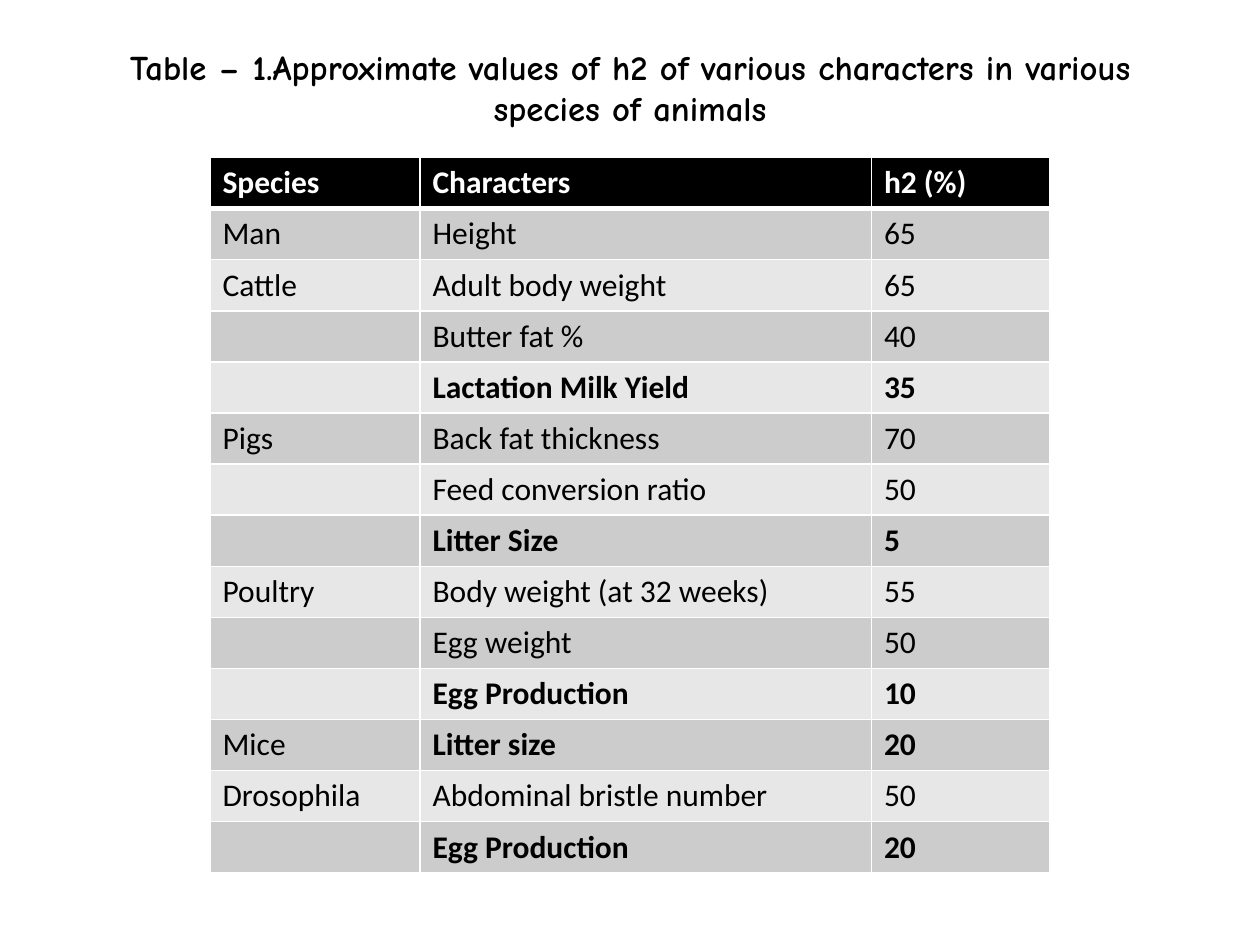
from lxml import etree
from pptx import Presentation
from pptx import util as u
from pptx.dml.color import RGBColor
from pptx.enum import text
from pptx.oxml.ns import qn

BLACK, WHITE = "000000", "FFFFFF"
BANDS = ("CCCCCC", "E7E7E7")
TITLE = ("Table – 1.Approximate values of h2 of various characters "
         "in various species of animals")
HEADINGS = ("Species", "Characters", "h2 (%)")
COLUMN_WIDTHS = (120, 258, 102)
ROW_HEIGHT = 29.2

# Species, character, heritability, emphasised
TRAITS = [
    ("Man", "Height", 65, False),
    ("Cattle", "Adult body weight", 65, False),
    ("", "Butter fat %", 40, False),
    ("", "Lactation Milk Yield", 35, True),
    ("Pigs", "Back fat thickness", 70, False),
    ("", "Feed conversion ratio", 50, False),
    ("", "Litter Size", 5, True),
    ("Poultry", "Body weight (at 32 weeks)", 55, False),
    ("", "Egg weight", 50, False),
    ("", "Egg Production", 10, True),
    ("Mice", "Litter size", 20, True),
    ("Drosophila", "Abdominal bristle number", 50, False),
    ("", "Egg Production", 20, True),
]


def color(value):
    return RGBColor.from_string(value)


def style(paragraph, font_name, size, ink, bold):
    font = paragraph.font
    font.name, font.size, font.bold = font_name, u.Pt(size), bold
    font.color.rgb = color(ink)


def add_title(slide, words):
    title = slide.shapes.add_textbox(u.Pt(36), u.Pt(21.6), u.Pt(648), u.Pt(56.2))
    frame = title.text_frame
    frame.word_wrap = True
    frame.vertical_anchor = text.MSO_ANCHOR.MIDDLE
    heading = frame.paragraphs[0]
    heading.text = words
    heading.alignment = text.PP_ALIGN.CENTER
    style(heading, "Comic Neue", 19.8, BLACK, True)


def set_borders(cell, top=1, bottom=1):
    properties = cell._tc.get_or_add_tcPr()
    for side, width in (("L", 1), ("R", 1), ("T", top), ("B", bottom)):
        line = etree.SubElement(properties, qn(f"a:ln{side}"), w=str(u.Pt(width)))
        fill = etree.SubElement(line, qn("a:solidFill"))
        etree.SubElement(fill, qn("a:srgbClr"), val=WHITE)


def fill_cell(cell, words, fill, ink, bold, top=1, bottom=1):
    set_borders(cell, top, bottom)
    cell.fill.solid()
    cell.fill.fore_color.rgb = color(fill)
    cell.text = words
    style(cell.text_frame.paragraphs[0], "Calibri", 18, ink, bold)


def add_trait_table(slide):
    row_count = len(TRAITS) + 1
    table = slide.shapes.add_table(
        row_count, len(HEADINGS), u.Pt(120), u.Pt(90),
        u.Pt(sum(COLUMN_WIDTHS)), u.Pt(ROW_HEIGHT * row_count)).table
    for column, width in zip(table.columns, COLUMN_WIDTHS):
        column.width = u.Pt(width)
    for row in table.rows:
        row.height = u.Pt(ROW_HEIGHT)

    # Header row, with a heavier rule below
    for column, heading in enumerate(HEADINGS):
        fill_cell(table.cell(0, column), heading, BLACK, WHITE, True, bottom=3)

    # Banded rows; emphasis leaves the species name regular
    for row, (species, character, h2, emphasised) in enumerate(TRAITS, 1):
        fill = BANDS[(row - 1) % 2]
        top = 3 if row == 1 else 1
        for column, words in enumerate((species, character, str(h2))):
            fill_cell(table.cell(row, column), words, fill, BLACK,
                      emphasised and column > 0, top=top)


def main():
    deck = Presentation()
    deck.slide_width, deck.slide_height = u.Pt(720), u.Pt(540)
    slide = deck.slides.add_slide(deck.slide_layouts[6])
    add_title(slide, TITLE)
    add_trait_table(slide)
    deck.save("out.pptx")


if __name__ == "__main__":
    main()
